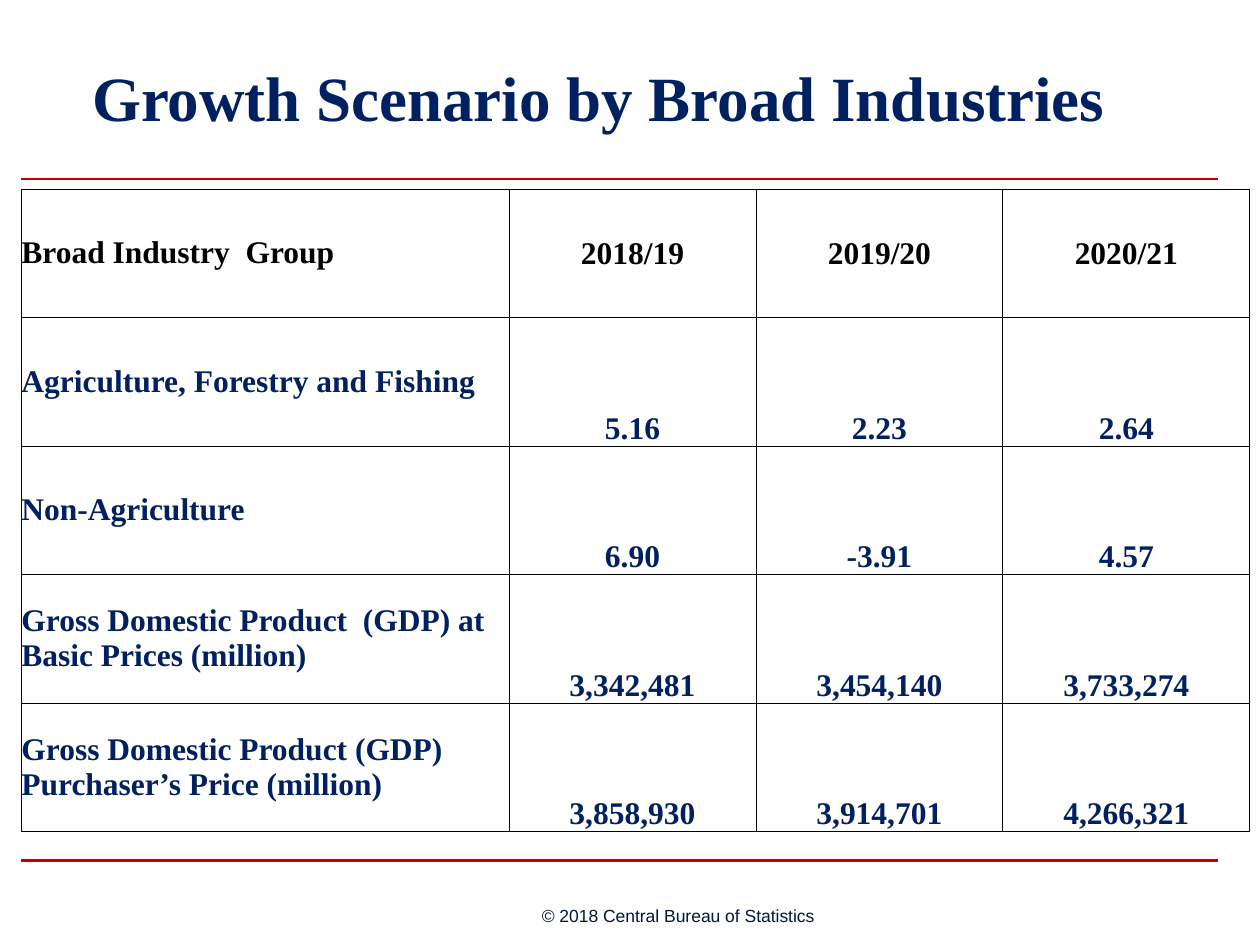
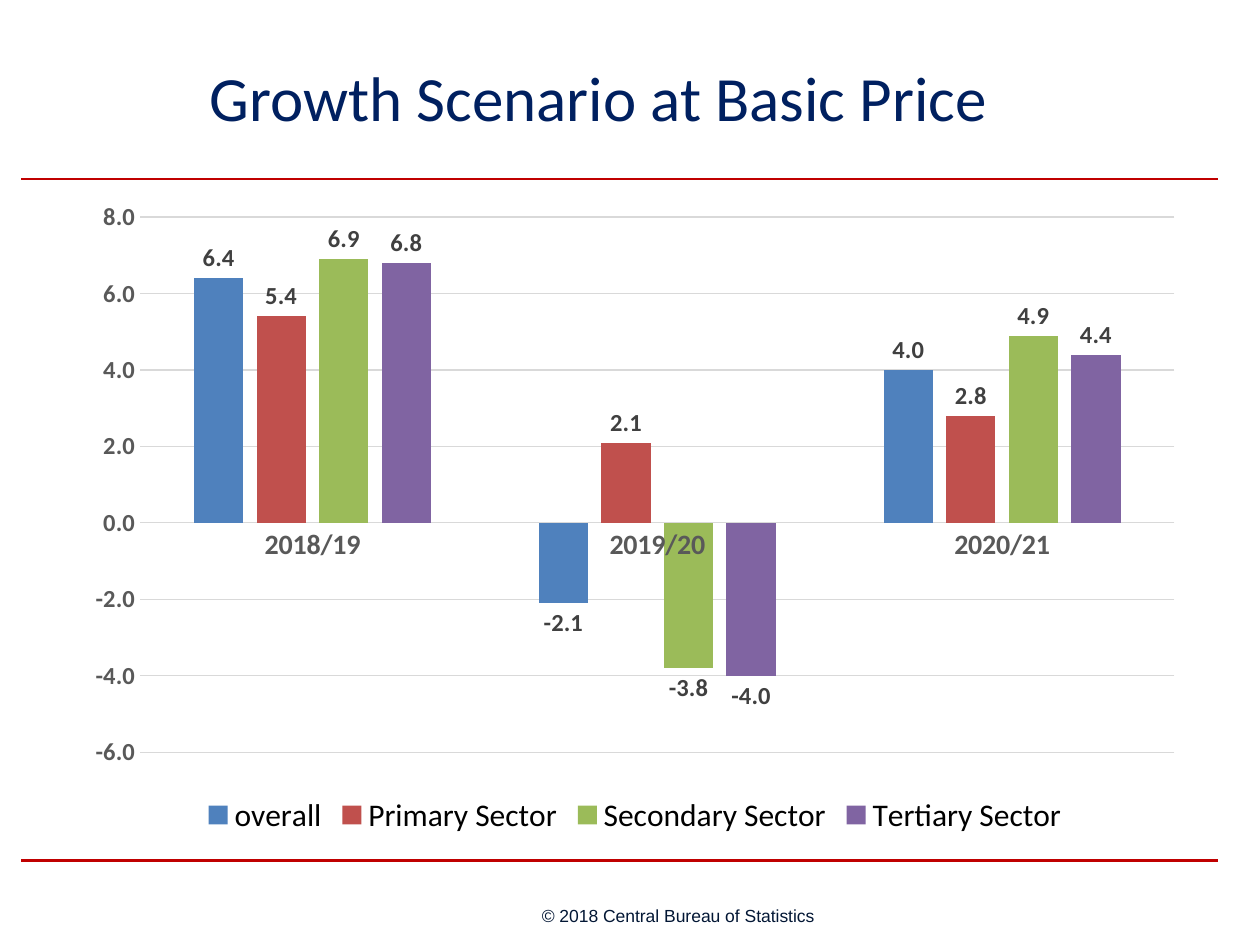
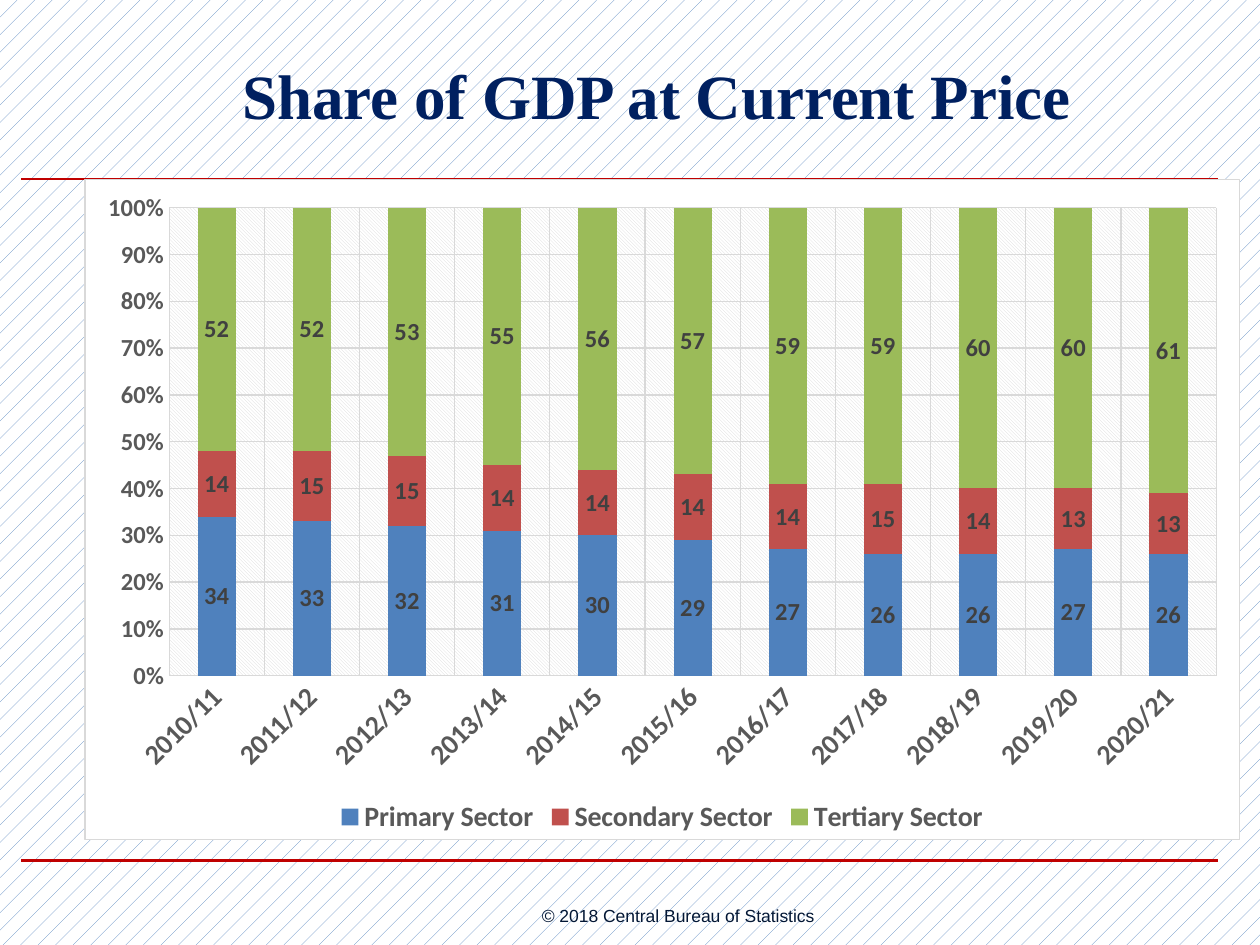
from dataclasses import dataclass
from typing import Optional

from lxml.etree import SubElement
from pptx import Presentation
from pptx.chart.data import CategoryChartData
from pptx.dml.color import RGBColor
from pptx.enum.chart import XL_CHART_TYPE as ChartType
from pptx.enum.chart import XL_LABEL_POSITION as LabelPosition
from pptx.enum.chart import XL_LEGEND_POSITION as LegendPosition
from pptx.enum.chart import XL_TICK_MARK as TickMark
from pptx.enum.dml import MSO_PATTERN as Pattern
from pptx.enum.shapes import MSO_CONNECTOR as ConnectorType
from pptx.enum.text import MSO_ANCHOR as Anchor
from pptx.enum.text import MSO_AUTO_SIZE as AutoSize
from pptx.enum.text import PP_ALIGN as Align
from pptx.oxml import parse_xml
from pptx.oxml.ns import nsdecls, qn
from pptx.util import Emu, Pt

EMU_PER_PX = 9144


@dataclass(frozen=True)
class Theme:
    """Colours, fonts and type sizes shared by the slides."""
    navy: str = "002060"
    rule: str = "C00000"
    footer: str = "031735"
    black: str = "000000"
    white: str = "FFFFFF"
    axis_text: str = "595959"
    label_text: str = "404040"
    grid: str = "D9D9D9"
    sectors: tuple = ("4F81BD", "C0504D", "9BBB59", "8064A2")
    serif: str = "Times New Roman"
    sans: str = "Calibri"
    footer_font: str = "Arial"
    title_size: int = 36
    table_size: int = 18
    category_size: int = 16
    value_size: int = 14
    small_size: int = 10
    hairline: float = 0.75


THEME = Theme()


@dataclass(frozen=True)
class Box:
    """A rectangle in px, 100 to the inch."""
    left: int
    top: int
    width: int
    height: int

    def emu(self) -> tuple:
        """Return left, top, width and height in EMU."""
        return tuple(px(n) for n in (self.left, self.top, self.width, self.height))


@dataclass(frozen=True)
class TextStyle:
    """How a run or a chart text looks."""
    size: int
    color: str
    font: str = THEME.sans
    bold: bool = False


@dataclass(frozen=True)
class ColumnChart:
    """A column chart with its data and look."""
    box: Box
    kind: ChartType
    categories: tuple
    series: dict
    colors: tuple
    gap: int
    overlap: int
    label_format: str
    label_position: LabelPosition
    axis_format: str
    legend: TextStyle
    value_range: Optional[tuple] = None
    framed: bool = False


TITLE_SERIF = TextStyle(THEME.title_size, THEME.navy, THEME.serif, True)
TITLE_SANS = TextStyle(THEME.title_size, THEME.navy)
FOOTER = TextStyle(THEME.small_size, THEME.footer, THEME.footer_font)
TABLE_HEAD = TextStyle(THEME.table_size, THEME.black, THEME.serif, True)
TABLE_BODY = TextStyle(THEME.table_size, THEME.navy, THEME.serif, True)
CATEGORY_TEXT = TextStyle(THEME.category_size, THEME.axis_text, bold=True)
VALUE_TEXT = TextStyle(THEME.value_size, THEME.axis_text, bold=True)
LABEL_TEXT = TextStyle(THEME.value_size, THEME.label_text, bold=True)

TITLE_BOX = Box(25, 25, 900, 103)
RULE_LEFT, RULE_RIGHT, RULE_TOPS = 17, 967, (142, 683)
FOOTER_BOX = Box(430, 717, 220, 19)

TABLE_BOX = Box(17, 150, 975, 510)
COLUMN_WIDTHS = (387, 196, 196, 196)
INDUSTRY_ROWS = (
    ("Broad Industry  Group", "2018/19", "2019/20", "2020/21"),
    ("Agriculture, Forestry and Fishing", "5.16", "2.23", "2.64"),
    ("Non-Agriculture", "6.90", "-3.91", "4.57"),
    ("Gross Domestic Product  (GDP) at Basic Prices (million)",
     "3,342,481", "3,454,140", "3,733,274"),
    ("Gross Domestic Product (GDP) Purchaser’s Price (million)",
     "3,858,930", "3,914,701", "4,266,321"),
)

GROWTH_CHART = ColumnChart(
    box=Box(58, 150, 892, 517),
    kind=ChartType.COLUMN_CLUSTERED,
    categories=("2018/19", "2019/20", "2020/21"),
    series={
        "overall": (6.4, -2.1, 4.0),
        "Primary Sector": (5.4, 2.1, 2.8),
        "Secondary Sector": (6.9, -3.8, 4.9),
        "Tertiary Sector": (6.8, -4.0, 4.4),
    },
    colors=THEME.sectors,
    gap=219,
    overlap=-27,
    label_format="0.0",
    label_position=LabelPosition.OUTSIDE_END,
    axis_format="0.0",
    legend=TextStyle(18, THEME.black),
    value_range=(-6, 8, 2),
)

SHARE_CHART = ColumnChart(
    box=Box(67, 142, 917, 525),
    kind=ChartType.COLUMN_STACKED_100,
    categories=tuple(f"{year}/{year % 100 + 1}" for year in range(2010, 2021)),
    series={
        "Primary Sector": (34, 33, 32, 31, 30, 29, 27, 26, 26, 27, 26),
        "Secondary Sector": (14, 15, 15, 14, 14, 14, 14, 15, 14, 13, 13),
        "Tertiary Sector": (52, 52, 53, 55, 56, 57, 59, 59, 60, 60, 61),
    },
    colors=THEME.sectors[:3],
    gap=150,
    overlap=100,
    label_format="0",
    label_position=LabelPosition.CENTER,
    axis_format="0%",
    legend=CATEGORY_TEXT,
    framed=True,
)


def px(length: int) -> Emu:
    """Turn px into EMU."""
    return Emu(length * EMU_PER_PX)


def rgb(color: str) -> RGBColor:
    """Turn a hex string into a colour."""
    return RGBColor.from_string(color)


def style_font(font, style: TextStyle) -> None:
    """Apply a text style to a font."""
    font.size = Pt(style.size)
    font.name = style.font
    font.bold = style.bold
    font.color.rgb = rgb(style.color)


def style_line(line, color: str, width: float) -> None:
    """Give a line its colour and width."""
    line.color.rgb = rgb(color)
    line.width = Pt(width)


def write(text_frame, text: str, style: TextStyle, align: Align = Align.LEFT) -> None:
    """Write one styled run into the first paragraph."""
    paragraph = text_frame.paragraphs[0]
    paragraph.alignment = align
    run = paragraph.add_run()
    run.text = text
    style_font(run.font, style)


def add_rule(slide, top: int) -> None:
    """Draw a red rule across the slide."""
    rule = slide.shapes.add_connector(
        ConnectorType.STRAIGHT, px(RULE_LEFT), px(top), px(RULE_RIGHT), px(top))
    style_line(rule.line, THEME.rule, 1.5)
    SubElement(rule.element.spPr, qn("a:effectLst"))


def add_slide(presentation, title: str, style: TextStyle, box: Box = TITLE_BOX):
    """Add a slide with its title, rules and footer."""
    slide = presentation.slides.add_slide(presentation.slide_layouts[5])
    shape = slide.shapes.title
    shape.left, shape.top, shape.width, shape.height = box.emu()
    shape.text_frame.vertical_anchor = Anchor.MIDDLE
    shape.text_frame.auto_size = AutoSize.NONE
    write(shape.text_frame, title, style, Align.CENTER)
    for top in RULE_TOPS:
        add_rule(slide, top)
    frame = slide.shapes.add_textbox(*FOOTER_BOX.emu()).text_frame
    frame.word_wrap = True
    frame.vertical_anchor = Anchor.MIDDLE
    frame.margin_left = frame.margin_right = frame.margin_top = frame.margin_bottom = 0
    write(frame, "© 2018 Central Bureau of Statistics", FOOTER)
    return slide


def fill_cell(cell, text: str, is_head: bool, is_name: bool) -> None:
    """Write and format one table cell."""
    margin = px(0 if is_name else 1)
    cell.margin_left = cell.margin_right = cell.margin_top = margin
    cell.margin_bottom = 0
    cell.vertical_anchor = Anchor.MIDDLE if is_head or is_name else Anchor.BOTTOM
    cell.fill.background()
    write(cell.text_frame, text, TABLE_HEAD if is_head else TABLE_BODY,
          Align.LEFT if is_name else Align.CENTER)


def add_borders(frame, color: str, width: float) -> None:
    """Draw all four borders of every cell."""
    for properties in frame.element.iter(qn("a:tcPr")):
        for index, side in enumerate("LRTB"):
            properties.insert(index, parse_xml(
                f'<a:ln{side} {nsdecls("a")} w="{Pt(width)}"><a:solidFill>'
                f'<a:srgbClr val="{color}"/></a:solidFill></a:ln{side}>'))


def add_industry_table(slide) -> None:
    """Add the table of growth by industry."""
    frame = slide.shapes.add_table(
        len(INDUSTRY_ROWS), len(COLUMN_WIDTHS), *TABLE_BOX.emu())
    table = frame.table
    table.first_row = table.horz_banding = False
    for column, width in zip(table.columns, COLUMN_WIDTHS):
        column.width = px(width)
    for row_index, row in enumerate(INDUSTRY_ROWS):
        for column_index, text in enumerate(row):
            fill_cell(table.cell(row_index, column_index), text,
                      row_index == 0, column_index == 0)
    add_borders(frame, THEME.black, 0.5)


def style_axis(axis, style: TextStyle, has_grid: bool, has_line: bool) -> None:
    """Format an axis, its labels and its grid."""
    axis.major_tick_mark = axis.minor_tick_mark = TickMark.NONE
    style_font(axis.tick_labels.font, style)
    axis.has_major_gridlines = has_grid
    if has_grid:
        style_line(axis.major_gridlines.format.line, THEME.grid, THEME.hairline)
    if has_line:
        style_line(axis.format.line, THEME.grid, THEME.hairline)
    else:
        axis.format.line.fill.background()


def frame_chart(chart) -> None:
    """Fill and outline the chart, hatch its plot and tilt its categories."""
    chart_part = chart.element.find(qn("c:chart"))
    namespaces = nsdecls("c", "a")
    solid = f'<a:solidFill><a:srgbClr val="{{}}"/></a:solidFill>'
    chart_part.addnext(parse_xml(
        f'<c:spPr {namespaces}>{solid.format(THEME.white)}'
        f'<a:ln w="{Pt(THEME.hairline)}">{solid.format(THEME.grid)}</a:ln></c:spPr>'))
    plot_area = chart_part.find(qn("c:plotArea"))
    plot_area.append(parse_xml(
        f'<c:spPr {namespaces}><a:pattFill prst="ltDnDiag">'
        f'<a:fgClr><a:srgbClr val="{THEME.grid}"/></a:fgClr>'
        f'<a:bgClr><a:srgbClr val="{THEME.white}"/></a:bgClr></a:pattFill></c:spPr>'))
    labels = plot_area.find(f'{qn("c:catAx")}/{qn("c:txPr")}/{qn("a:bodyPr")}')
    labels.set("rot", str(-45 * 60000))


def style_series(series, color: str, layout: ColumnChart) -> None:
    """Colour a series and show its values."""
    series.format.fill.solid()
    series.format.fill.fore_color.rgb = rgb(color)
    series.invert_if_negative = False
    labels = series.data_labels
    labels.show_value = True
    labels.number_format = layout.label_format
    labels.number_format_is_linked = False
    labels.position = layout.label_position
    style_font(labels.font, LABEL_TEXT)


def add_column_chart(slide, layout: ColumnChart) -> None:
    """Add a column chart."""
    data = CategoryChartData(number_format=layout.label_format)
    data.categories = layout.categories
    for name, values in layout.series.items():
        data.add_series(name, values)
    chart = slide.shapes.add_chart(layout.kind, *layout.box.emu(), data).chart
    style_font(chart.font, TextStyle(THEME.small_size, THEME.black))
    chart.has_title = False
    chart.has_legend = True
    chart.legend.position = LegendPosition.BOTTOM
    chart.legend.include_in_layout = False
    style_font(chart.legend.font, layout.legend)

    plot = chart.plots[0]
    plot.vary_by_categories = False
    plot.gap_width, plot.overlap = layout.gap, layout.overlap
    for series, color in zip(plot.series, layout.colors):
        style_series(series, color, layout)

    style_axis(chart.category_axis, CATEGORY_TEXT, layout.framed, True)
    axis = chart.value_axis
    style_axis(axis, VALUE_TEXT, True, layout.framed)
    axis.tick_labels.number_format = layout.axis_format
    axis.tick_labels.number_format_is_linked = False
    if layout.value_range:
        axis.minimum_scale, axis.maximum_scale, axis.major_unit = layout.value_range
    if layout.framed:
        frame_chart(chart)


def hatch_background(slide) -> None:
    """Give the slide a light patterned background."""
    fill = slide.background.fill
    fill.patterned()
    fill.pattern = Pattern.PERCENT_5
    fill.fore_color.rgb = rgb(THEME.sectors[0])
    fill.back_color.rgb = rgb(THEME.white)


def main() -> None:
    """Build and save the presentation."""
    presentation = Presentation()
    presentation.slide_width, presentation.slide_height = px(1000), px(750)

    industries = add_slide(presentation, "Growth Scenario by Broad Industries", TITLE_SERIF)
    add_industry_table(industries)

    growth = add_slide(presentation, "Growth Scenario at Basic Price", TITLE_SANS)
    add_column_chart(growth, GROWTH_CHART)

    share = add_slide(presentation, "Share of GDP at Current Price", TITLE_SERIF,
                      Box(96, 23, 850, 103))
    hatch_background(share)
    add_column_chart(share, SHARE_CHART)

    presentation.save("out.pptx")


if __name__ == "__main__":
    main()
